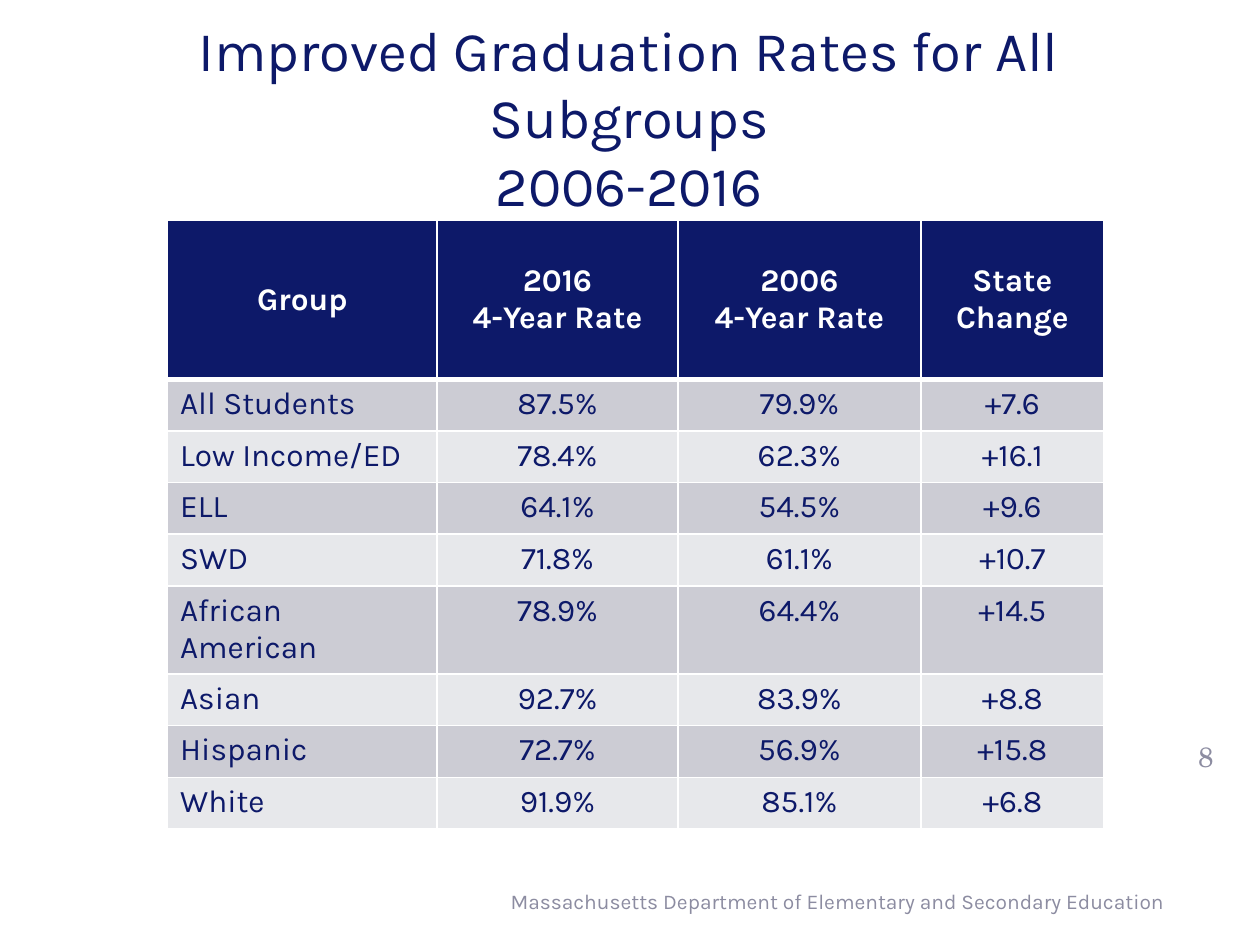
from lxml.etree import SubElement
from pptx import Presentation
from pptx.dml.color import RGBColor
from pptx.enum.text import MSO_ANCHOR, PP_ALIGN
from pptx.oxml.ns import qn
from pptx.util import Inches, Pt

NAVY, GRAY, WHITE = "0D1969", "8C8CA1", "FFFFFF"
BANDS = ("CCCCD4", "E7E8EB")
COLUMN_WIDTHS = (2.14, 1.91, 1.93, 1.45)
HEADER_HEIGHT, ROW_HEIGHT, TALL_ROW_HEIGHT = 1.26, 0.41, 0.68
HEADERS = ("Group", "2016\n4-Year Rate", "2006\n4-Year Rate", "State Change")
RATES = (
    ("All Students", "87.5%", "79.9%", "+7.6"),
    ("Low Income/ED", "78.4%", "62.3%", "+16.1"),
    ("ELL", "64.1%", "54.5%", "+9.6"),
    ("SWD", "71.8%", "61.1%", "+10.7"),
    ("African American", "78.9%", "64.4%", "+14.5"),
    ("Asian", "92.7%", "83.9%", "+8.8"),
    ("Hispanic", "72.7%", "56.9%", "+15.8"),
    ("White", "91.9%", "85.1%", "+6.8"),
)


def rgb(color):
    """Turn a hex string into a colour."""
    return RGBColor.from_string(color)


def write_text(text_frame, text, size, color, align, font="Karla", bold=False):
    """Set the text of a frame and format its paragraphs and runs."""
    text_frame.text = text
    text_frame.word_wrap = True
    for paragraph in text_frame.paragraphs:
        paragraph.alignment = align
        for run in paragraph.runs:
            run.font.name = font
            run.font.size = Pt(size)
            run.font.bold = bold
            run.font.color.rgb = rgb(color)


def add_text(slide, box, text, size, color, align, font="Karla"):
    """Add a vertically centred text box."""
    shape = slide.shapes.add_textbox(*map(Inches, box))
    write_text(shape.text_frame, text, size, color, align, font)
    shape.text_frame.vertical_anchor = MSO_ANCHOR.MIDDLE
    return shape


def set_borders(cell, bottom_width, top_width):
    """Draw white lines around a cell."""
    properties = cell._tc.get_or_add_tcPr()
    widths = {"a:lnL": 1, "a:lnR": 1, "a:lnT": top_width, "a:lnB": bottom_width}
    for index, (side, width) in enumerate(widths.items()):
        line = SubElement(properties, qn(side), w=str(Pt(width)))
        fill = SubElement(line, qn("a:solidFill"))
        SubElement(fill, qn("a:srgbClr"), val=WHITE)
        properties.insert(index, line)


def fill_cell(cell, text, row, column):
    """Write and style one cell of the rate table."""
    header = row == 0
    align = PP_ALIGN.CENTER if header or column else PP_ALIGN.LEFT
    write_text(cell.text_frame, text, 18, WHITE if header else NAVY, align, bold=header)
    cell.vertical_anchor = MSO_ANCHOR.MIDDLE if header else MSO_ANCHOR.TOP
    cell.fill.solid()
    cell.fill.fore_color.rgb = rgb(NAVY if header else BANDS[(row - 1) % 2])
    set_borders(cell, 3 if header else 1, 3 if row == 1 else 1)


def add_rate_table(slide):
    """Add the table of graduation rates by group."""
    rows = (HEADERS, *RATES)
    heights = [HEADER_HEIGHT] + [
        TALL_ROW_HEIGHT if group == "African American" else ROW_HEIGHT
        for group, *_ in RATES
    ]
    table = slide.shapes.add_table(
        len(rows), len(HEADERS), Inches(1.33), Inches(1.75),
        Inches(sum(COLUMN_WIDTHS)), Inches(sum(heights)),
    ).table
    for column, width in zip(table.columns, COLUMN_WIDTHS):
        column.width = Inches(width)
    for row, (texts, height) in enumerate(zip(rows, heights)):
        table.rows[row].height = Inches(height)
        for column, text in enumerate(texts):
            fill_cell(table.cell(row, column), text, row, column)


def main():
    """Build and save the slide."""
    presentation = Presentation()
    presentation.slide_width, presentation.slide_height = Inches(10), Inches(7.5)
    slide = presentation.slides.add_slide(presentation.slide_layouts[6])
    title = add_text(slide, (0.33, 0.3, 9.33, 1.25),
                     "Improved Graduation Rates for All Subgroups\v2006-2016",
                     32, NAVY, PP_ALIGN.CENTER)
    title.text_frame.margin_left = title.text_frame.margin_right = Inches(0.2)
    add_text(slide, (3.42, 6.95, 5.92, 0.4),
             "Massachusetts Department of Elementary and Secondary Education",
             12, GRAY, PP_ALIGN.RIGHT)
    add_text(slide, (9.28, 5.75, 0.58, 0.5), "8", 16, GRAY, PP_ALIGN.CENTER,
             "TeX Gyre Schola")
    add_rate_table(slide)
    presentation.save("out.pptx")


if __name__ == "__main__":
    main()
